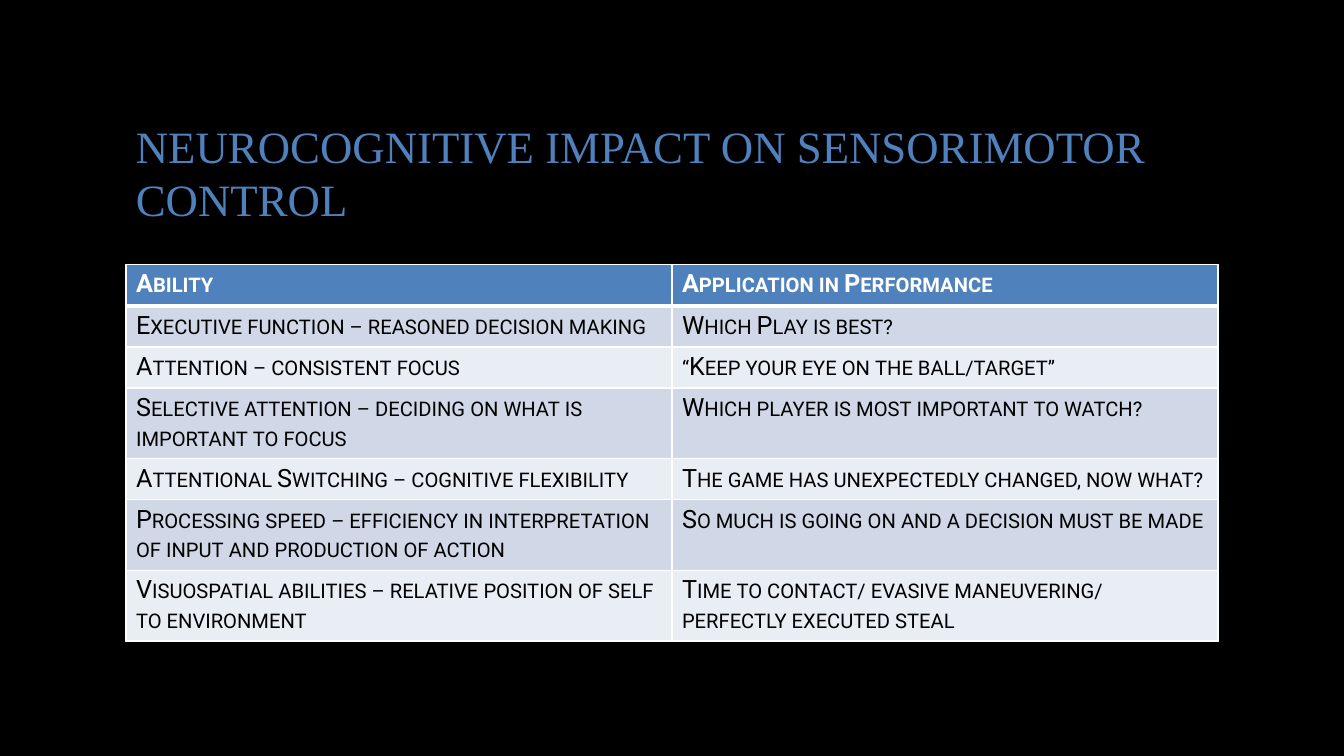
from lxml.etree import SubElement
from pptx import Presentation
from pptx.dml.color import RGBColor
from pptx.enum.text import MSO_ANCHOR, PP_ALIGN
from pptx.oxml.ns import qn
from pptx.util import Inches, Pt

COLORS = {
    "background": "000000",
    "accent": "4F81BD",
    "white": "FFFFFF",
    "black": "000000",
    "odd_band": "D0D8E8",
    "even_band": "E9EDF4",
}
GRID_COLUMNS, GRID_ROWS = 32, 18
LEFT, WIDTH = 3, 26

HEADINGS = ("Ability", "Application in Performance")
ABILITIES = [
    ("Executive function – reasoned decision making", "Which Play is best?"),
    ("Attention – consistent focus", "“Keep your eye on the ball/target”"),
    ("Selective attention – deciding on what is important to focus",
     "Which player is most important to watch?"),
    ("Attentional Switching – cognitive flexibility",
     "The game has unexpectedly changed, now what?"),
    ("Processing speed – efficiency in interpretation of input and production of action",
     "So much is going on and a decision must be made"),
    ("Visuospatial abilities – relative position of self to environment",
     "Time to contact/ evasive maneuvering/ perfectly executed steal"),
]


def rgb(name):
    return RGBColor.from_string(COLORS[name])


class SlideBuilder:
    """Places styled elements on a slide by grid columns and rows."""

    title_font = "Times New Roman"
    table_font = "Roboto"

    def __init__(self, presentation):
        self.slide = presentation.slides.add_slide(presentation.slide_layouts[6])
        self.column = presentation.slide_width / GRID_COLUMNS
        self.row = presentation.slide_height / GRID_ROWS
        fill = self.slide.background.fill
        fill.solid()
        fill.fore_color.rgb = rgb("background")

    def place(self, left, top, width, height):
        """Turn grid units into slide lengths."""
        return (round(left * self.column), round(top * self.row),
                round(width * self.column), round(height * self.row))

    def style(self, paragraph, name, size, color, bold=False):
        paragraph.alignment = PP_ALIGN.LEFT
        font = paragraph.font
        font.name, font.size, font.bold = name, Pt(size), bold
        font.color.rgb = rgb(color)

    def title(self, text, *area):
        frame = self.slide.shapes.add_textbox(*self.place(*area)).text_frame
        frame.word_wrap = True
        frame.vertical_anchor = MSO_ANCHOR.MIDDLE
        frame.text = text
        self.style(frame.paragraphs[0], self.title_font, 32, "accent")

    def table(self, records, left, top, width, row_height):
        """Add a banded table whose first record is the header."""
        area = self.place(left, top, width, row_height * len(records))
        table = self.slide.shapes.add_table(len(records), len(records[0]), *area).table
        for row_index, record in enumerate(records):
            for column_index, text in enumerate(record):
                self.cell(table.cell(row_index, column_index), text, row_index)

    def cell(self, cell, text, row_index):
        header = row_index == 0
        band = "accent" if header else "odd_band" if row_index % 2 else "even_band"
        self.borders(cell, top=3 if row_index == 1 else 1, bottom=3 if header else 1)
        cell.fill.solid()
        cell.fill.fore_color.rgb = rgb(band)
        cell.text = text
        paragraph = cell.text_frame.paragraphs[0]
        self.style(paragraph, self.table_font, 18, "white" if header else "black", header)
        for run in paragraph.runs:
            run.font._element.set("cap", "small")

    def borders(self, cell, top, bottom):
        properties = cell._tc.get_or_add_tcPr()
        for side, points in (("L", 1), ("R", 1), ("T", top), ("B", bottom)):
            line = SubElement(properties, qn(f"a:ln{side}"), w=str(Pt(points)))
            fill = SubElement(line, qn("a:solidFill"))
            SubElement(fill, qn("a:srgbClr"), val=COLORS["white"])


def main():
    presentation = Presentation()
    presentation.slide_width, presentation.slide_height = Inches(13.33), Inches(7.5)
    builder = SlideBuilder(presentation)
    builder.title("NEUROCOGNITIVE IMPACT ON SENSORIMOTOR CONTROL", LEFT, 1.6, WIDTH, 5)
    builder.table([HEADINGS, *ABILITIES], LEFT, 6.3, WIDTH, 0.98)
    presentation.save("out.pptx")


if __name__ == "__main__":
    main()
